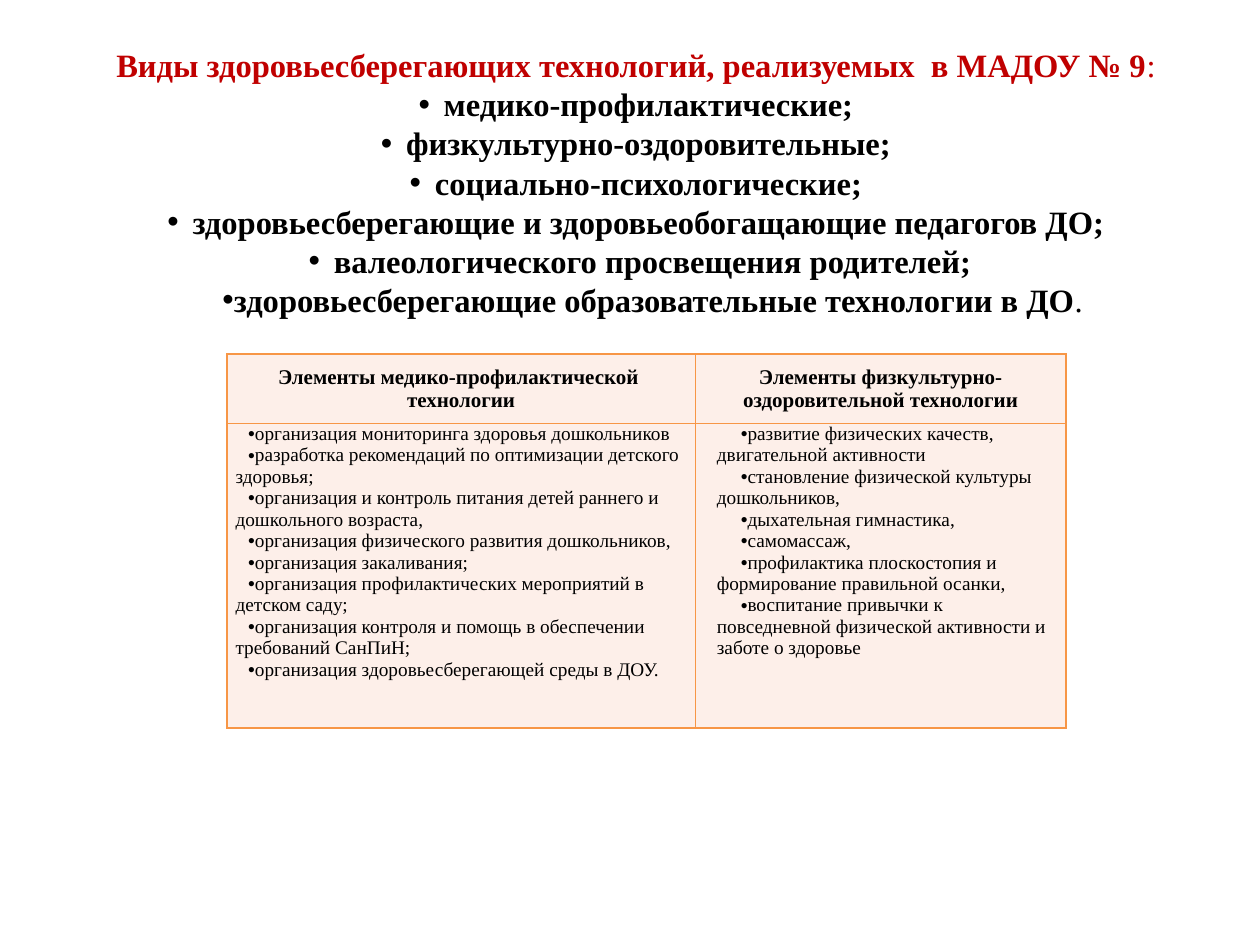
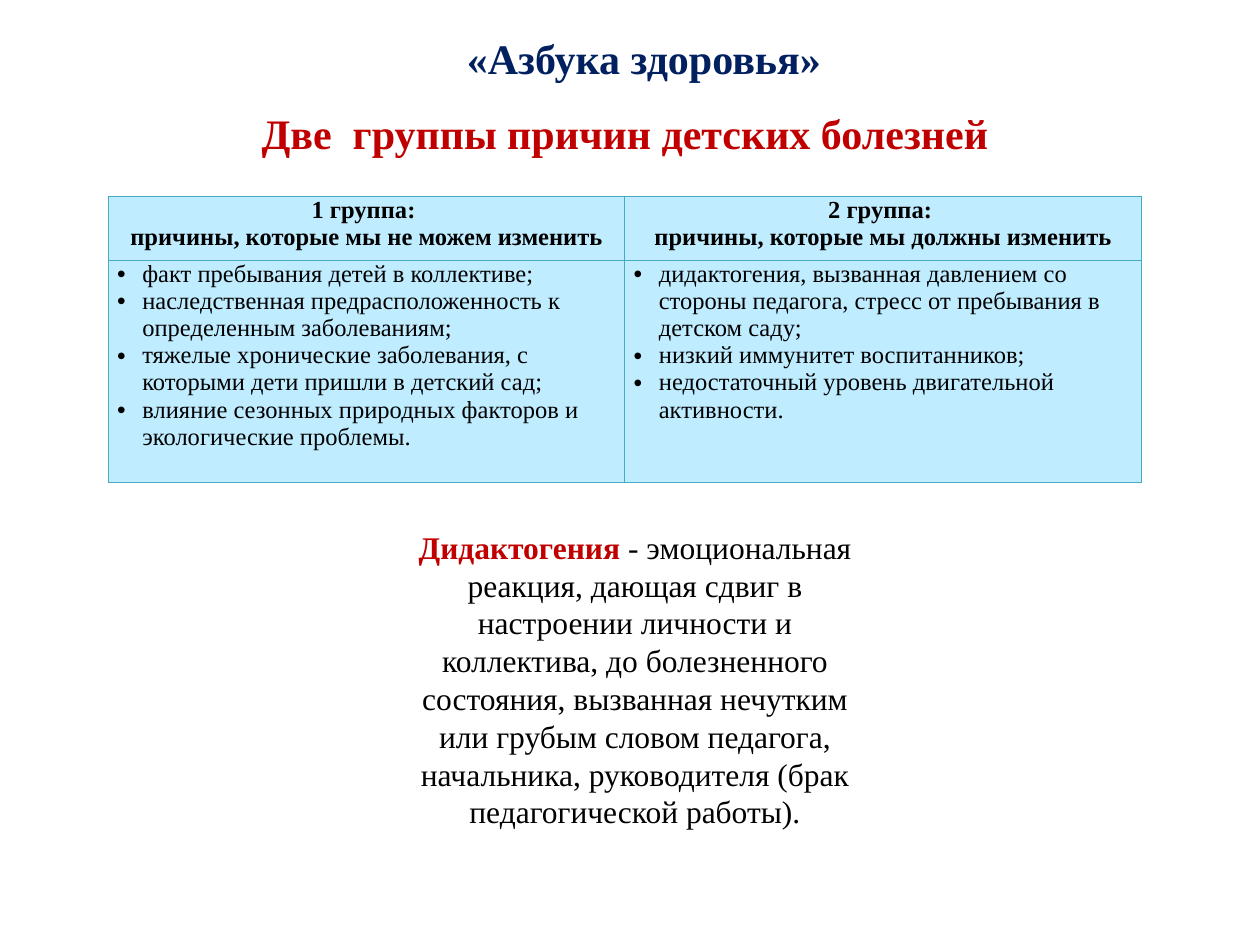
import pptx
import pptx.util
import pptx.dml.color
import pptx.enum.text
import pptx.oxml
import pptx.oxml.ns
from lxml import etree

Inches, Pt = pptx.util.Inches, pptx.util.Pt
ANCHOR = pptx.enum.text.MSO_ANCHOR
CENTER = pptx.enum.text.PP_ALIGN.CENTER
LEFT = pptx.enum.text.PP_ALIGN.LEFT
qn = pptx.oxml.ns.qn

FONT = "Times New Roman"
COLORS = {
    "red": "C00000", "navy": "002060", "black": "000000", "white": "FFFFFF",
    "peach": "FDEFE9", "orange": "F79646",
    "sky": "BFECFF", "teal": "46AAC5",
}

# Run formats
HEADING = {"size": 18.6, "color": "red", "bold": True}
KIND = {"size": 18.6, "color": "black", "bold": True}
TITLE = {"size": 24, "color": "navy", "bold": True}
SUBTITLE = {"size": 24, "color": "red", "bold": True}
TERM = {"size": 18, "color": "red", "bold": True}
DEFINITION = {"size": 18, "color": "black", "bold": False}

# Paragraph indents: left margin, first line
HANGING = (0.2, -0.2)
FIRST_LINE = (0, 0.2)

KINDS_HEADING = "Виды здоровьесберегающих технологий, реализуемых  в МАДОУ № 9"
KINDS = [
    "медико-профилактические; ",
    "физкультурно-оздоровительные; ",
    "социально-психологические; ",
    "здоровьесберегающие и здоровьеобогащающие педагогов ДО; ",
    "валеологического просвещения родителей;",
]
LAST_KIND = "здоровьесберегающие образовательные технологии в ДО"

TECHNOLOGIES = {
    "at": (1.8, 2.81), "cols": (3.72, 2.94), "rows": (0.55, 2.42),
    "fill": "peach", "border": "orange", "border_width": 0.95,
    "header_size": 12, "size": 11, "header_anchor": ANCHOR.MIDDLE,
    "columns": [
        {
            "header": ["Элементы медико-профилактической ", "технологии"],
            "indent": (0, 0.1),
            "items": [
                "организация мониторинга здоровья дошкольников",
                "разработка рекомендаций по оптимизации детского здоровья;",
                "организация и контроль питания детей раннего и дошкольного возраста,",
                "организация физического развития дошкольников,",
                "организация закаливания;",
                "организация профилактических мероприятий в детском саду;",
                "организация контроля и помощь в обеспечении требований СанПиН;",
                "организация здоровьесберегающей среды в ДОУ.",
            ],
        },
        {
            "header": ["Элементы физкультурно-оздоровительной технологии"],
            "indent": (0.1, 0.19),
            "items": [
                "развитие физических качеств, двигательной активности",
                "становление физической культуры дошкольников,",
                "дыхательная гимнастика,",
                "самомассаж,",
                "профилактика плоскостопия и формирование правильной осанки,",
                "воспитание привычки к повседневной физической активности и заботе о здоровье",
            ],
        },
    ],
}

CAUSES = {
    "at": (0.86, 1.56), "cols": (4.1, 4.1), "rows": (0.51, 1.76),
    "fill": "sky", "border": "teal", "border_width": 0.75,
    "header_size": 14, "size": 14, "header_anchor": ANCHOR.TOP,
    "columns": [
        {
            "header": ["1 группа: ", "причины, которые мы не можем изменить"],
            "indent": HANGING,
            "items": [
                "факт пребывания детей в коллективе;",
                "наследственная предрасположенность к определенным заболеваниям;",
                "тяжелые хронические заболевания, с которыми дети пришли в детский сад;",
                "влияние сезонных природных факторов и экологические проблемы.",
            ],
        },
        {
            "header": ["2 группа: ", "причины, которые мы должны изменить"],
            "indent": HANGING,
            "items": [
                "дидактогения, вызванная давлением со стороны педагога, "
                "стресс от пребывания в детском саду;",
                "низкий иммунитет воспитанников;",
                "недостаточный уровень двигательной активности.",
            ],
        },
    ],
}

DIDACTOGENY = [
    ("Дидактогения ", TERM),
    ("- эмоциональная реакция, дающая сдвиг в настроении личности и коллектива, "
     "до болезненного состояния, вызванная нечутким или грубым словом педагога, "
     "начальника, руководителя (брак педагогической работы).", DEFINITION),
]


def rgb(name):
    return pptx.dml.color.RGBColor.from_string(COLORS[name])


def set_fill(item, color):
    item.fill.solid()
    item.fill.fore_color.rgb = rgb(color)


def para(runs, indent=None, align=CENTER, spacing=1.0):
    """Describe a paragraph; an indent makes it a bullet."""
    return {"runs": runs, "indent": indent, "align": align, "spacing": spacing}


def set_bullet(p, indent):
    pPr = p._p.get_or_add_pPr()
    margin, first = indent or (0, 0)
    pPr.set("marL", str(Inches(margin)))
    pPr.set("indent", str(Inches(first)))
    if indent:
        etree.SubElement(pPr, qn("a:buFont")).set("typeface", "Arial")
        etree.SubElement(pPr, qn("a:buChar")).set("char", "•")
    else:
        etree.SubElement(pPr, qn("a:buNone"))


def fill_text(tf, paras):
    for i, item in enumerate(paras):
        p = tf.paragraphs[0] if i == 0 else tf.add_paragraph()
        set_bullet(p, item["indent"])
        layout = {"alignment": item["align"], "line_spacing": item["spacing"],
                  "space_before": Pt(0), "space_after": Pt(0)}
        for key, value in layout.items():
            setattr(p, key, value)
        for text, style in item["runs"]:
            r = p.add_run()
            r.text = text
            font = {"name": FONT, "size": Pt(style["size"]), "bold": style["bold"]}
            for key, value in font.items():
                setattr(r.font, key, value)
            r.font.color.rgb = rgb(style["color"])


def place_text(sp, at, paras, anchor=ANCHOR.TOP):
    for key, value in zip(("left", "top", "width", "height"), at):
        setattr(sp, key, Inches(value))
    tf = sp.text_frame
    frame = {"word_wrap": True, "vertical_anchor": anchor,
             "auto_size": pptx.enum.text.MSO_AUTO_SIZE.NONE}
    for key, value in frame.items():
        setattr(tf, key, value)
    fill_text(tf, paras)


def set_borders(cell, color, width):
    tcPr = cell._tc.get_or_add_tcPr()
    for side in ("a:lnL", "a:lnR", "a:lnT", "a:lnB"):
        ln = etree.SubElement(tcPr, qn(side), w=str(Pt(width)))
        solid = etree.SubElement(ln, qn("a:solidFill"))
        etree.SubElement(solid, qn("a:srgbClr"), val=COLORS[color])


def add_two_column_table(slide, data):
    cols, rows = data["cols"], data["rows"]
    box = (*data["at"], sum(cols), sum(rows))
    table = slide.shapes.add_table(len(rows), len(cols), *map(Inches, box)).table
    table.first_row = table.horz_banding = False
    for row, height in zip(table.rows, rows):
        row.height = Inches(height)
    header_style = {"size": data["header_size"], "color": "black", "bold": True}
    item_style = {"size": data["size"], "color": "black", "bold": False}
    anchors = (data["header_anchor"], ANCHOR.TOP)
    for c, column in enumerate(data["columns"]):
        table.columns[c].width = Inches(cols[c])
        header = [para([(t, header_style)]) for t in column["header"]]
        items = [para([(t, item_style)], column["indent"], LEFT)
                 for t in column["items"]]
        for r, (paras, anchor) in enumerate(zip((header, items), anchors)):
            cell = table.cell(r, c)
            form = {"margin_left": Inches(0.07), "margin_right": Inches(0.07),
                    "margin_top": 0, "margin_bottom": 0, "vertical_anchor": anchor}
            for key, value in form.items():
                setattr(cell, key, value)
            set_borders(cell, data["border"], data["border_width"])
            set_fill(cell, data["fill"])
            fill_text(cell.text_frame, paras)


def build_technologies(prs):
    slide = prs.slides.add_slide(prs.slide_layouts[1])
    title = slide.shapes.title
    title._element.getparent().remove(title._element)
    plain_heading = {**HEADING, "bold": False}
    plain_kind = {**KIND, "bold": False}
    paras = [para([(KINDS_HEADING, HEADING), (": ", plain_heading)])]
    paras += [para([(kind, KIND)], HANGING) for kind in KINDS]
    paras.append(para([(LAST_KIND, KIND), (".", plain_kind)], FIRST_LINE))
    place_text(slide.placeholders[1], (0.47, 0.31, 9.22, 2.42), paras)
    add_two_column_table(slide, TECHNOLOGIES)


def build_causes(prs):
    slide = prs.slides.add_slide(prs.slide_layouts[1])
    place_text(slide.shapes.title, (3.12, 0.3, 3.98, 0.32),
               [para([("«Азбука здоровья»", TITLE)])], ANCHOR.MIDDLE)
    subtitle = slide.placeholders[1]
    set_fill(subtitle, "white")
    place_text(subtitle, (1.56, 0.78, 6.8, 0.55),
               [para([("Две  группы причин детских болезней", SUBTITLE)], spacing=1.05)])
    add_two_column_table(slide, CAUSES)
    at = (3.05, 4.14, 3.98, 2.81)
    place_text(slide.shapes.add_textbox(*map(Inches, at)), at, [para(DIDACTOGENY)])


def main():
    prs = pptx.Presentation()
    prs.slide_width, prs.slide_height = Inches(10), Inches(7.5)
    build_technologies(prs)
    build_causes(prs)
    prs.save("out.pptx")


if __name__ == "__main__":
    main()
